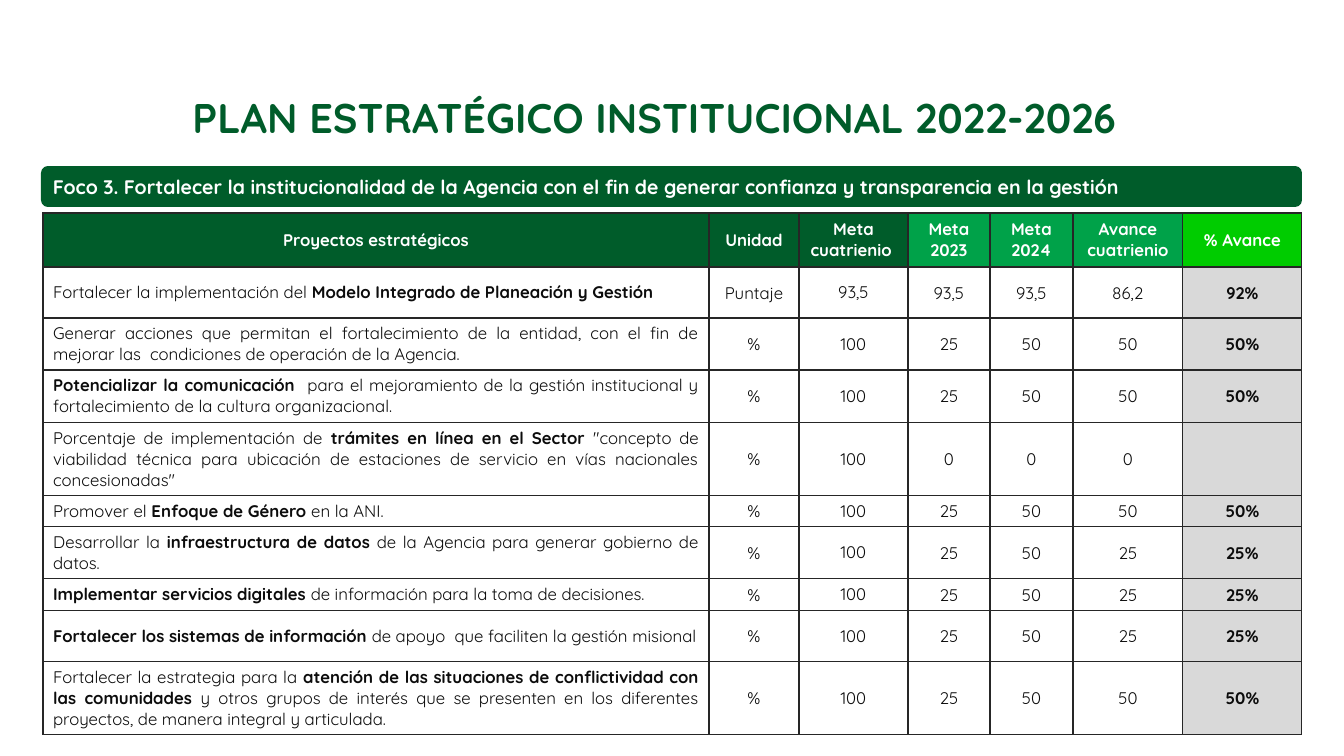
"""Build the slide with focus 3 of the 2022-2026 institutional strategic plan."""
from dataclasses import dataclass

from lxml.etree import SubElement
from pptx import Presentation
from pptx.dml.color import RGBColor
from pptx.enum.shapes import MSO_SHAPE
from pptx.enum.text import MSO_ANCHOR, PP_ALIGN
from pptx.oxml.ns import qn
from pptx.slide import Slide
from pptx.table import _Cell
from pptx.text.text import TextFrame
from pptx.util import Emu, Pt


@dataclass(frozen=True)
class Theme:
    font: str = "Quicksand"
    dark_green: str = "005C2A"
    mid_green: str = "00A249"
    bright_green: str = "00CC00"
    white: str = "FFFFFF"
    grey: str = "D9D9D9"
    ink: str = "0C0C0C"
    border: str = "262626"
    title_size: float = 29.6
    focus_size: float = 14
    table_size: float = 12


@dataclass(frozen=True)
class Column:
    heading: str
    width: int
    heading_fill: str
    body_fill: str = "FFFFFF"
    tight: bool = True
    bold: bool = False
    align: PP_ALIGN = PP_ALIGN.CENTER


@dataclass(frozen=True)
class Project:
    height: int
    name: str
    unit: str
    term_goal: str
    goal_2023: str
    goal_2024: str
    progress: str
    percent: str

    def values(self) -> tuple[str, ...]:
        """Return the cell texts from left to right."""
        return (self.name, self.unit, self.term_goal, self.goal_2023,
                self.goal_2024, self.progress, self.percent)


THEME = Theme()
EMU_PER_INCH = 914400
PX_PER_INCH = 100.8
BOLD_MARK = "**"
HEADING_HEIGHT = 54

COLUMNS = (
    Column("Proyectos estratégicos", 666, THEME.dark_green, tight=False, align=PP_ALIGN.JUSTIFY),
    Column("Unidad", 90, THEME.dark_green),
    Column("Meta cuatrienio ", 109, THEME.dark_green, tight=False),
    Column("Meta 2023", 82, THEME.mid_green),
    Column("Meta 2024", 83, THEME.mid_green),
    Column("Avance cuatrienio", 110, THEME.mid_green),
    Column("% Avance", 119, THEME.bright_green, THEME.grey, bold=True),
)

PROJECTS = (
    Project(51, "Fortalecer la implementación del **Modelo Integrado de Planeación y Gestión ",
            "Puntaje", "93,5", "93,5", "93,5", "86,2", "92%"),
    Project(47, "Generar acciones que permitan el fortalecimiento de la entidad, con el fin de "
            "mejorar las  condiciones de operación de la Agencia. ",
            "%", "100", "25", "50", "50", "50%"),
    Project(47, "**Potencializar la comunicación  **para el mejoramiento de la gestión "
            "institucional y fortalecimiento de la cultura organizacional.",
            "%", "100", "25", "50", "50", "50%"),
    Project(67, "Porcentaje de implementación de **trámites en línea en el Sector **\"concepto de "
            "viabilidad técnica para ubicación de estaciones de servicio en vías nacionales "
            "concesionadas\"",
            "%", "100", "0", "0", "0", ""),
    Project(29, "Promover el **Enfoque de Género **en la ANI.",
            "%", "100", "25", "50", "50", "50%"),
    Project(47, "Desarrollar la **infraestructura de datos **de la Agencia para generar "
            "gobierno de datos.",
            "%", "100", "25", "50", "25", "25%"),
    Project(32, "**Implementar servicios digitales **de información para la toma de decisiones. ",
            "%", "100", "25", "50", "25", "25%"),
    Project(51, "**Fortalecer los sistemas de información **de apoyo  que faciliten la gestión "
            "misional",
            "%", "100", "25", "50", "25", "25%"),
    Project(67, "Fortalecer la estrategia para la **atención de las situaciones de conflictividad "
            "con las comunidades **y otros grupos de interés que se presenten en los diferentes "
            "proyectos, de manera integral y articulada.",
            "%", "100", "25", "50", "50", "50%"),
)


def px(length: int) -> Emu:
    """Turn whole pixels into EMU."""
    return Emu(round(length * EMU_PER_INCH / PX_PER_INCH))


def write(frame: TextFrame, text: str, size: float, color: str, align: PP_ALIGN,
          bold: bool = False) -> None:
    """Add text run by run, switching weight at each bold mark."""
    paragraph = frame.paragraphs[0]
    paragraph.alignment = align
    for position, part in enumerate(text.split(BOLD_MARK)):
        if part:
            run = paragraph.add_run()
            run.text = part
            run.font.name = THEME.font
            run.font.size = Pt(size)
            run.font.bold = bold or position % 2 == 1
            run.font.color.rgb = RGBColor.from_string(color)


def style_cell(cell: _Cell, fill: str) -> None:
    """Give a cell its borders, fill and vertical centring."""
    properties = cell._tc.get_or_add_tcPr()
    for side in ("a:lnL", "a:lnR", "a:lnT", "a:lnB"):
        line = SubElement(properties, qn(side), w=str(Pt(1)))
        SubElement(SubElement(line, qn("a:solidFill")), qn("a:srgbClr"), val=THEME.border)
    cell.fill.solid()
    cell.fill.fore_color.rgb = RGBColor.from_string(fill)
    cell.vertical_anchor = MSO_ANCHOR.MIDDLE


def add_title(slide: Slide) -> None:
    """Add the slide title."""
    title = slide.shapes.add_textbox(px(118), px(82), px(1074), px(77)).text_frame
    title.word_wrap = True
    title.vertical_anchor = MSO_ANCHOR.MIDDLE
    title.paragraphs[0].line_spacing = 0.9
    write(title, "PLAN ESTRATÉGICO INSTITUCIONAL 2022-2026", THEME.title_size,
          THEME.dark_green, PP_ALIGN.CENTER, bold=True)


def add_focus(slide: Slide) -> None:
    """Add the rounded bar that names the focus."""
    focus = slide.shapes.add_shape(MSO_SHAPE.ROUNDED_RECTANGLE,
                                   px(41), px(166), px(1261), px(41))
    focus.shadow.inherit = False
    focus.fill.solid()
    focus.fill.fore_color.rgb = RGBColor.from_string(THEME.dark_green)
    focus.line.fill.background()
    focus.text_frame.word_wrap = True
    focus.text_frame.vertical_anchor = MSO_ANCHOR.MIDDLE
    write(focus.text_frame, "Foco 3. Fortalecer la institucionalidad de la Agencia con el fin de "
          "generar confianza y transparencia en la gestión", THEME.focus_size,
          THEME.white, PP_ALIGN.LEFT, bold=True)


def add_projects(slide: Slide) -> None:
    """Add the table of strategic projects."""
    heights = [HEADING_HEIGHT, *(project.height for project in PROJECTS)]
    table = slide.shapes.add_table(
        len(heights), len(COLUMNS), px(43), px(213),
        px(sum(column.width for column in COLUMNS)), px(sum(heights))).table
    table.first_row = False
    table.horz_banding = False
    for row, height in zip(table.rows, heights):
        row.height = px(height)
    for index, column in enumerate(COLUMNS):
        table.columns[index].width = px(column.width)
        heading = table.cell(0, index)
        style_cell(heading, column.heading_fill)
        write(heading.text_frame, column.heading, THEME.table_size, THEME.white,
              PP_ALIGN.CENTER, bold=True)
        for row_index, project in enumerate(PROJECTS, start=1):
            cell = table.cell(row_index, index)
            style_cell(cell, column.body_fill)
            if column.tight:
                cell.margin_left = cell.margin_right = cell.margin_top = px(1)
                cell.margin_bottom = px(0)
            write(cell.text_frame, project.values()[index], THEME.table_size, THEME.ink,
                  column.align, column.bold)


def main() -> None:
    """Build and save the presentation."""
    presentation = Presentation()
    presentation.slide_width = px(1344)
    presentation.slide_height = px(756)
    slide = presentation.slides.add_slide(presentation.slide_layouts[6])
    add_projects(slide)
    add_focus(slide)
    add_title(slide)
    presentation.save("out.pptx")


if __name__ == "__main__":
    main()
